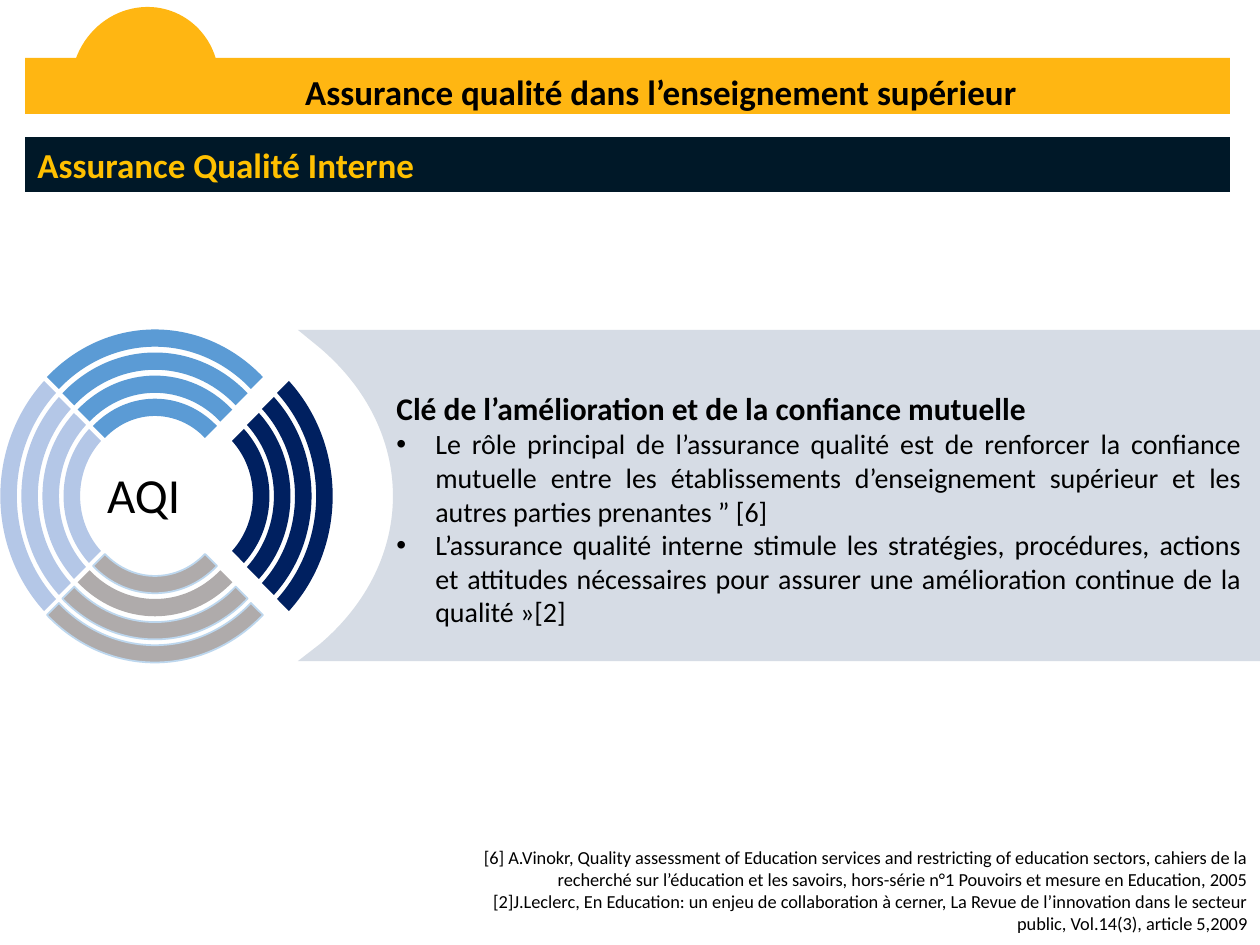
from dataclasses import dataclass

from lxml.etree import SubElement
from pptx import Presentation
from pptx.dml.color import RGBColor
from pptx.enum.shapes import MSO_SHAPE as Preset
from pptx.enum.text import MSO_ANCHOR as Anchor, MSO_AUTO_SIZE as AutoSize, PP_ALIGN as Align
from pptx.oxml.ns import qn
from pptx.util import Emu, Pt

EMU_PER_PX = 914400 / 126
FONT = "Calibri"

BLACK = RGBColor(0x00, 0x00, 0x00)
AMBER = RGBColor(0xFF, 0xB6, 0x12)
GOLD = RGBColor(0xFF, 0xC0, 0x00)
NIGHT = RGBColor(0x00, 0x18, 0x28)
NAVY = RGBColor(0x00, 0x20, 0x60)
BLUE = RGBColor(0x5B, 0x9B, 0xD5)
PALE_BLUE = RGBColor(0xB4, 0xC7, 0xE7)
ICE_BLUE = RGBColor(0xBD, 0xD7, 0xEE)
GREY = RGBColor(0xAF, 0xAB, 0xAB)
PANEL_GREY = RGBColor(0xD6, 0xDC, 0xE5)

RING_COUNT = 4
BAND = 12
CENTRE_X, CENTRE_Y = 155, 496

Point = tuple[float, float]


@dataclass(frozen=True)
class Box:
    left: int
    top: int
    width: int
    height: int

    def emu(self) -> list[Emu]:
        return [px(v) for v in (self.left, self.top, self.width, self.height)]


@dataclass(frozen=True)
class Line:
    """One paragraph and its format."""
    text: str
    size: float
    color: RGBColor = BLACK
    bold: bool = False
    align: Align = Align.LEFT
    hanging: int = 0


@dataclass(frozen=True)
class Sector:
    """Four bands facing one way; each range runs from outer to inner ring."""
    facing: tuple[int, int]
    color: RGBColor
    half_chord: tuple[int, int]
    distance: tuple[int, int]
    bulge: float
    shift: int = 0
    outlined: tuple[int, ...] = ()


FLAT = {"half_chord": (108, 62), "distance": (119, 70), "bulge": 0.44}
TALL = {"half_chord": (115, 67), "distance": (111, 66), "bulge": 0.38}
SECTORS = (
    Sector((-1, 0), PALE_BLUE, **TALL),
    Sector((0, -1), BLUE, **FLAT),
    Sector((0, 1), GREY, outlined=(0, 1, 3), **FLAT),
    Sector((1, 0), NAVY, shift=23, **TALL),
)

KEY_POINTS = (
    Line("Clé de l’amélioration et de la confiance mutuelle", 18, bold=True, align=Align.JUSTIFY),
    Line("Le rôle principal de l’assurance qualité est de renforcer la confiance mutuelle entre "
         "les établissements d’enseignement supérieur et les autres parties prenantes ” [6]",
         16, align=Align.JUSTIFY, hanging=39),
    Line("L’assurance qualité interne stimule les stratégies, procédures, actions et attitudes "
         "nécessaires pour assurer une amélioration continue de la qualité »[2]",
         16, align=Align.JUSTIFY, hanging=39),
)
REFERENCES = (
    Line("[6] A.Vinokr, Quality assessment of Education services and restricting of education "
         "sectors, cahiers de la recherché sur l’éducation et les savoirs, hors-série n°1 "
         "Pouvoirs et mesure en Education, 2005", 10.5, align=Align.RIGHT),
    Line("[2]J.Leclerc, En Education: un enjeu de collaboration à cerner, La Revue de "
         "l’innovation dans le secteur public, Vol.14(3), article 5,2009",
         10.5, align=Align.RIGHT),
)


def px(length: float) -> Emu:
    return Emu(round(length * EMU_PER_PX))


def paint(shape, fill: RGBColor | None, outline: RGBColor | None = None) -> None:
    shape.shadow.inherit = False
    if fill is None:
        shape.fill.background()
    else:
        shape.fill.solid()
        shape.fill.fore_color.rgb = fill
    if outline is None:
        shape.line.fill.background()
    else:
        shape.line.color.rgb = outline
        shape.line.width = Pt(1)


def add_preset(shapes, preset: Preset, box: Box, fill: RGBColor | None):
    shape = shapes.add_shape(preset, *box.emu())
    paint(shape, fill)
    return shape


def write(frame, lines: tuple[Line, ...], anchor: Anchor = Anchor.TOP) -> None:
    frame.word_wrap = True
    frame.auto_size = AutoSize.NONE
    frame.vertical_anchor = anchor
    for index, line in enumerate(lines):
        paragraph = frame.add_paragraph() if index else frame.paragraphs[0]
        paragraph.alignment = line.align
        if line.hanging:
            properties = paragraph._p.get_or_add_pPr()
            properties.set("marL", str(px(line.hanging)))
            properties.set("indent", str(-px(line.hanging)))
            SubElement(properties, qn("a:buFont")).set("typeface", "Arial")
            SubElement(properties, qn("a:buChar")).set("char", "•")
        run = paragraph.add_run()
        run.text = line.text
        run.font.name = FONT
        run.font.size = Pt(line.size)
        run.font.bold = line.bold
        run.font.color.rgb = line.color


def add_text(shapes, box: Box, lines: tuple[Line, ...]) -> None:
    write(shapes.add_textbox(*box.emu()).text_frame, lines)


def bend(shape, crests: tuple[int, ...]) -> None:
    """Turn the two straight sides that meet at each crest into one cubic curve."""
    contour = next(shape._element.iter(qn("a:path")))
    corners = [node for node in contour if len(node)]
    for crest in crests:
        start, top, end = ((int(node[0].get("x")), int(node[0].get("y")))
                           for node in corners[crest - 1:crest + 2])
        curve = SubElement(contour, qn("a:cubicBezTo"))
        for along in (-0.22, 0.22):
            control = [(a + b) / 2 + (c - (a + b) / 2) * 4 / 3 + (b - a) * along
                       for a, c, b in zip(start, top, end)]
            add_vertex(curve, control)
        add_vertex(curve, end)
        corners[crest].addprevious(curve)
        contour.remove(corners[crest])
        contour.remove(corners[crest + 1])


def add_vertex(curve, position) -> None:
    vertex = SubElement(curve, qn("a:pt"))
    for axis, value in zip("xy", position):
        vertex.set(axis, str(round(value)))


def add_outline(shapes, points: list[Point], crests: tuple[int, ...], fill: RGBColor,
                outline: RGBColor | None = None) -> None:
    start, *rest = [(px(x), px(y)) for x, y in points]
    builder = shapes.build_freeform(*start, scale=1.0)
    builder.add_line_segments(rest, close=True)
    shape = builder.convert_to_shape()
    bend(shape, crests)
    paint(shape, fill, outline)


def band_edge(sector: Sector, half: float, distance: float) -> list[Point]:
    """Give the start, crest and end of one curved edge."""
    out_x, out_y = sector.facing
    return [(CENTRE_X + sector.shift + outward * out_x - along * out_y,
             CENTRE_Y + outward * out_y + along * out_x)
            for along, outward in ((-half, distance),
                                   (0, distance + sector.bulge * half),
                                   (half, distance))]


def add_sector(shapes, sector: Sector) -> None:
    for ring in range(RING_COUNT):
        half, distance = (first + (last - first) * ring / (RING_COUNT - 1)
                          for first, last in (sector.half_chord, sector.distance))
        outer = band_edge(sector, half, distance)
        inner = band_edge(sector, half - BAND, distance - BAND)
        add_outline(shapes, outer + inner[::-1], (1, 4), sector.color,
                    ICE_BLUE if ring in sector.outlined else None)


def main() -> None:
    deck = Presentation()
    deck.slide_width, deck.slide_height = px(1260), px(945)
    slide = deck.slides.add_slide(deck.slide_layouts[5])
    shapes = slide.shapes

    add_preset(shapes, Preset.RECTANGLE, Box(25, 58, 1205, 56), AMBER)
    add_preset(shapes, Preset.CHORD, Box(68, 10, 154, 147), AMBER).rotation = 112.9

    title = shapes.title
    title.left, title.top, title.width, title.height = Box(276, 64, 770, 55).emu()
    write(title.text_frame, (Line("Assurance qualité dans l’enseignement supérieur", 20,
                                  bold=True, align=Align.CENTER),))
    shapes._spTree.append(title._element)

    subtitle = add_preset(shapes, Preset.RECTANGLE, Box(25, 137, 1205, 55), NIGHT)
    write(subtitle.text_frame, (Line("Assurance Qualité Interne", 20, GOLD, bold=True),))

    for sector in SECTORS:
        add_sector(shapes, sector)
    hub = add_preset(shapes, Preset.OVAL, Box(58, 399, 196, 189), None)
    hub.text_frame.margin_right = px(37)
    write(hub.text_frame, (Line("AQI", 28, align=Align.CENTER),), Anchor.MIDDLE)

    panel = [(320, 348), (298, 330), (1260, 330), (1260, 661), (298, 661),
             (320, 644), (393, 496), (320, 348)]
    add_outline(shapes, panel, (6,), PANEL_GREY)
    add_text(shapes, Box(384, 383, 870, 254), KEY_POINTS)
    add_text(shapes, Box(457, 840, 803, 102), REFERENCES)

    deck.save("out.pptx")


if __name__ == "__main__":
    main()
